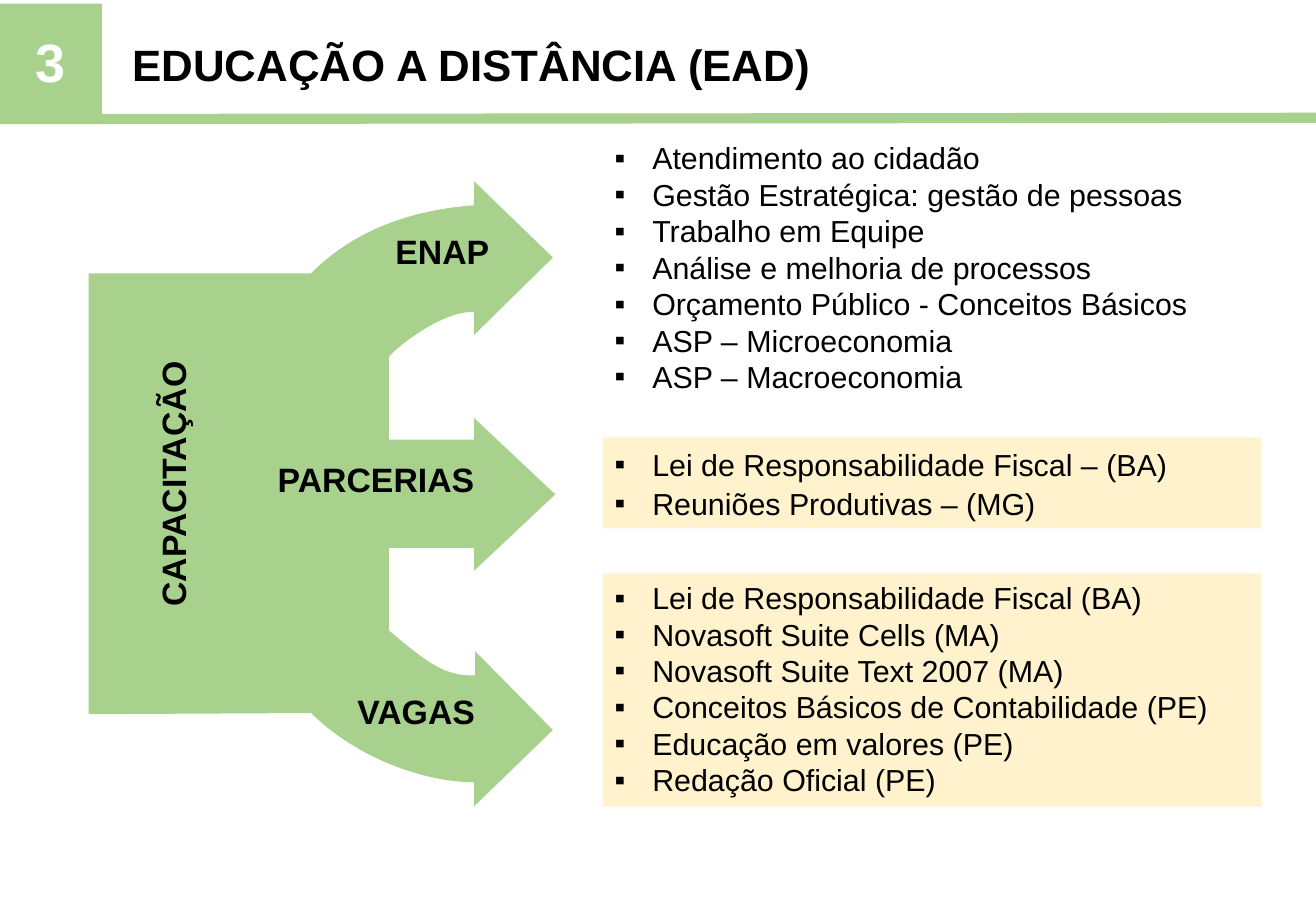
from dataclasses import dataclass
from typing import NamedTuple

from lxml.etree import SubElement
from pptx import Presentation
from pptx.dml.color import RGBColor
from pptx.enum.shapes import MSO_CONNECTOR, MSO_SHAPE
from pptx.enum.text import MSO_ANCHOR as Anchor, PP_ALIGN as Align
from pptx.oxml.ns import qn
from pptx.slide import Slide
from pptx.util import Pt

PX = 9144
GREEN = RGBColor(0xA9, 0xD1, 0x8E)
CREAM = RGBColor(0xFF, 0xF2, 0xCC)
BLACK = RGBColor(0x00, 0x00, 0x00)
WHITE = RGBColor(0xFF, 0xFF, 0xFF)
FONT = "Arial"
CURVE_STEPS = 24
BULLET_INDENT = 31


class Point(NamedTuple):
    x: int
    y: int


class Curve(NamedTuple):
    control1: Point
    control2: Point
    end: Point


class Box(NamedTuple):
    left: int
    top: int
    width: int
    height: int


@dataclass(frozen=True)
class Heading:
    text: str
    box: Box
    size: int = 20
    color: RGBColor = BLACK
    fill: RGBColor | None = None
    align: Align = Align.CENTER
    anchor: Anchor = Anchor.MIDDLE
    margin: int = 5
    rotation: int = 0
    wrap: bool = False


@dataclass(frozen=True)
class CourseList:
    box: Box
    courses: tuple[str, ...]
    fill: RGBColor | None = None
    line_spacing: float = 1.0


ARROW_OUTLINE: tuple[Point | Curve, ...] = (
    Point(73, 588),
    Point(73, 225),
    Point(256, 225),
    Curve(Point(298, 183), Point(351, 172), Point(390, 169)),
    Point(390, 149),
    Point(455, 212),
    Point(390, 276),
    Point(390, 257),
    Curve(Point(367, 255), Point(329, 283), Point(320, 294)),
    Point(320, 362),
    Point(390, 362),
    Point(390, 344),
    Point(457, 407),
    Point(390, 470),
    Point(390, 451),
    Point(320, 451),
    Point(320, 519),
    Curve(Point(350, 544), Point(365, 557), Point(391, 556)),
    Point(391, 536),
    Point(455, 601),
    Point(390, 664),
    Point(390, 644),
    Curve(Point(353, 644), Point(297, 627), Point(256, 587)),
)

HEADINGS = (
    Heading("EDUCAÇÃO A DISTÂNCIA (EAD)", Box(99, 26, 988, 54), size=26,
            align=Align.JUSTIFY, anchor=Anchor.TOP, margin=10, wrap=True),
    Heading("ENAP", Box(320, 185, 88, 43)),
    Heading("PARCERIAS", Box(223, 373, 173, 43)),
    Heading("VAGAS", Box(289, 564, 107, 43)),
    Heading("CAPACITAÇÃO", Box(31, 379, 222, 39), rotation=270, wrap=True),
    Heading("3", Box(0, 3, 84, 94), size=32, color=WHITE, fill=GREEN, wrap=True),
)

COURSE_LISTS = (
    CourseList(Box(496, 110, 542, 222), (
        "Atendimento ao cidadão",
        "Gestão Estratégica: gestão de pessoas",
        "Trabalho em Equipe",
        "Análise e melhoria de processos",
        "Orçamento Público - Conceitos Básicos",
        "ASP – Microeconomia",
        "ASP – Macroeconomia",
    )),
    CourseList(Box(496, 360, 542, 75), (
        "Lei de Responsabilidade Fiscal – (BA)",
        "Reuniões Produtivas – (MG)",
    ), fill=CREAM, line_spacing=1.07),
    CourseList(Box(496, 472, 542, 192), (
        "Lei de Responsabilidade Fiscal (BA)",
        "Novasoft Suite Cells (MA)",
        "Novasoft Suite Text 2007 (MA)",
        "Conceitos Básicos de Contabilidade (PE)",
        "Educação em valores (PE)",
        "Redação Oficial (PE)",
    ), fill=CREAM),
)


def add_box(s: Slide, box: Box, fill: RGBColor | None):
    bounds = [value * PX for value in box]
    if fill is None:
        return s.shapes.add_textbox(*bounds)
    sp = s.shapes.add_shape(MSO_SHAPE.RECTANGLE, *bounds)
    paint(sp, fill)
    return sp


def paint(sp, color: RGBColor) -> None:
    sp.shadow.inherit = False
    sp.fill.solid()
    sp.fill.fore_color.rgb = color
    sp.line.fill.background()


def format_runs(p, size: int, color: RGBColor, bold: bool) -> None:
    for r in p.runs:
        r.font.name = FONT
        r.font.size = Pt(size)
        r.font.bold = bold
        r.font.color.rgb = color


def add_heading(s: Slide, heading: Heading) -> None:
    sp = add_box(s, heading.box, heading.fill)
    sp.rotation = heading.rotation
    tf = sp.text_frame
    tf.text = heading.text
    tf.word_wrap = heading.wrap
    tf.vertical_anchor = heading.anchor
    tf.margin_left = tf.margin_right = heading.margin * PX
    tf.margin_top = tf.margin_bottom = 5 * PX
    p = tf.paragraphs[0]
    p.alignment = heading.align
    format_runs(p, heading.size, heading.color, True)


def add_course_list(s: Slide, course_list: CourseList) -> None:
    tf = add_box(s, course_list.box, course_list.fill).text_frame
    tf.text = "\n".join(course_list.courses)
    tf.word_wrap = True
    tf.vertical_anchor = Anchor.TOP
    for p in tf.paragraphs:
        p.alignment = Align.LEFT
        p.line_spacing = course_list.line_spacing
        format_runs(p, 18, BLACK, False)
        props = p._p.get_or_add_pPr()
        props.set("marL", str(BULLET_INDENT * PX))
        props.set("indent", str(-BULLET_INDENT * PX))
        SubElement(props, qn("a:buFont"), typeface=FONT)
        SubElement(props, qn("a:buChar"), char="▪")


def curve_points(start: Point, curve: Curve) -> list[tuple[float, float]]:
    corners = (start, *curve)
    points = []
    for step in range(1, CURVE_STEPS + 1):
        t = step / CURVE_STEPS
        weights = ((1 - t) ** 3, 3 * t * (1 - t) ** 2, 3 * t * t * (1 - t), t ** 3)
        points.append((sum(w * c.x for w, c in zip(weights, corners)),
                       sum(w * c.y for w, c in zip(weights, corners))))
    return points


def add_outline(s: Slide, outline: tuple[Point | Curve, ...]) -> None:
    pen = outline[0]
    points = []
    for part in outline:
        if isinstance(part, Curve):
            points += curve_points(pen, part)
            pen = part.end
        else:
            points.append(part)
            pen = part
    first, *rest = [(x * PX, y * PX) for x, y in points]
    builder = s.shapes.build_freeform(*first)
    builder.add_line_segments(rest, close=True)
    paint(builder.convert_to_shape(), GREEN)


def add_rule(s: Slide, start: Point, end: Point) -> None:
    ends = [value * PX for value in (*start, *end)]
    rule = s.shapes.add_connector(MSO_CONNECTOR.STRAIGHT, *ends)
    rule.line.color.rgb = GREEN
    rule.line.width = Pt(6)
    SubElement(rule._element.spPr, qn("a:effectLst"))


def main() -> None:
    prs = Presentation()
    prs.slide_width, prs.slide_height = 1083 * PX, 750 * PX
    s = prs.slides.add_slide(prs.slide_layouts[6])
    add_outline(s, ARROW_OUTLINE)
    add_rule(s, Point(-1, 98), Point(1086, 97))
    for heading in HEADINGS:
        add_heading(s, heading)
    for course_list in COURSE_LISTS:
        add_course_list(s, course_list)
    prs.save("out.pptx")


if __name__ == "__main__":
    main()
